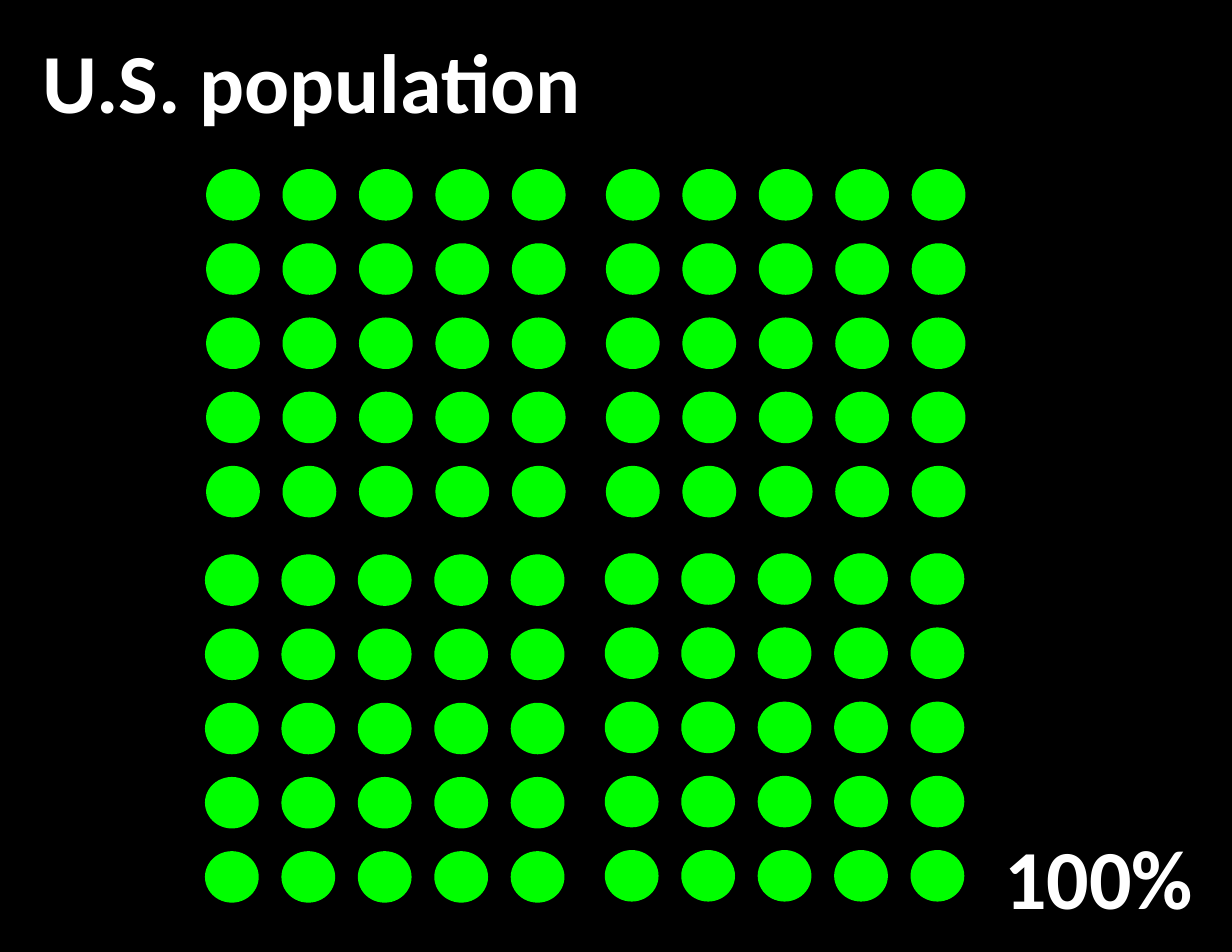
import itertools
import pptx
import pptx.dml.color
import pptx.enum.shapes
import pptx.enum.text
import pptx.util

Inches = pptx.util.Inches
Align = pptx.enum.text.PP_ALIGN

# Content: text, box (left, top, width, height), alignment, wrap
LABELS = [
    ("U.S. population", (0.27, 0.2, 5.05, 1.02), Align.LEFT, False),
    ("100%", (8.62, 7.31, 2.38, 1.02), Align.CENTER, True),
]
# Top left corner of each block of 25 dots
BLOCKS = [(5.41, 1.51), (5.4, 4.94), (1.84, 1.51), (1.83, 4.95)]
SIDE = 5
SPAN = (2.73, 2.65)  # first dot to last dot, across and down
DOT = (0.48, 0.46)
COLORS = {"back": "000000", "dot": "00FF00", "text": "FFFFFF"}


def color(name):
    return pptx.dml.color.RGBColor.from_string(COLORS[name])


def add_dot(slide, left, top):
    dot = slide.shapes.add_shape(
        pptx.enum.shapes.MSO_SHAPE.OVAL,
        *map(Inches, (left, top, *DOT)))
    dot.shadow.inherit = False
    dot.fill.solid()
    dot.fill.fore_color.rgb = color("dot")
    dot.line.fill.background()


def add_label(slide, text, box, align, wrap):
    frame = slide.shapes.add_textbox(*map(Inches, box)).text_frame
    frame.text = text
    frame.word_wrap = wrap
    frame.auto_size = pptx.enum.text.MSO_AUTO_SIZE.SHAPE_TO_FIT_TEXT
    frame.margin_left = frame.margin_right = Inches(0.11)
    frame.margin_top = frame.margin_bottom = Inches(0.06)
    line = frame.paragraphs[0]
    line.alignment = align
    font = line.runs[0].font
    font.name, font.size, font.bold = "Calibri", pptx.util.Pt(54), True
    font.color.rgb = color("text")


def main():
    deck = pptx.Presentation()
    deck.slide_width, deck.slide_height = Inches(11), Inches(8.5)
    slide = deck.slides.add_slide(deck.slide_layouts[6])
    slide.background.fill.solid()
    slide.background.fill.fore_color.rgb = color("back")

    # Four blocks of dots, one dot per percent
    step_x, step_y = (span / (SIDE - 1) for span in SPAN)
    for left, top in BLOCKS:
        for row, col in itertools.product(range(SIDE), repeat=2):
            add_dot(slide, left + col * step_x, top + row * step_y)

    # Title and total
    for label in LABELS:
        add_label(slide, *label)

    deck.save("out.pptx")


if __name__ == "__main__":
    main()
